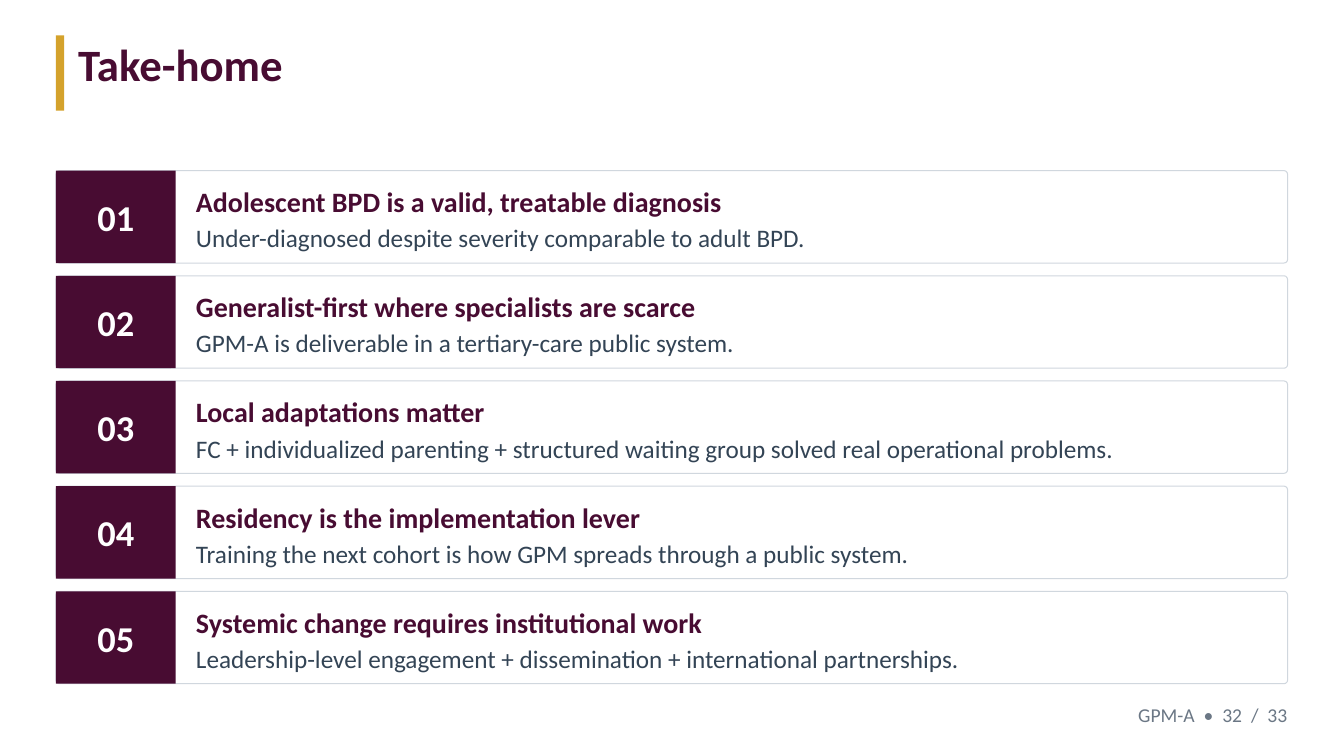
from pptx import Presentation
from pptx.dml.color import RGBColor
from pptx.enum.shapes import MSO_SHAPE
from pptx.enum.text import MSO_ANCHOR, MSO_AUTO_SIZE, PP_ALIGN
from pptx.util import Cm, Pt

PLUM = RGBColor(0x48, 0x0C, 0x32)
GOLD = RGBColor(0xD4, 0xA2, 0x2C)
WHITE = RGBColor(0xFF, 0xFF, 0xFF)
SLATE = RGBColor(0x33, 0x44, 0x55)
GREY = RGBColor(0x6B, 0x77, 0x85)
BORDER = RGBColor(0xD0, 0xD7, 0xDE)

FONT = "Calibri"
MARGIN = Cm(1.41)
CONTENT_W = Cm(31.04)
CARD_TOP, CARD_H, CARD_PITCH = Cm(4.3), Cm(2.33), Cm(2.65)

MESSAGES = [
    ("Adolescent BPD is a valid, treatable diagnosis",
     "Under-diagnosed despite severity comparable to adult BPD."),
    ("Generalist-first where specialists are scarce",
     "GPM-A is deliverable in a tertiary-care public system."),
    ("Local adaptations matter",
     "FC + individualized parenting + structured waiting group solved real operational problems."),
    ("Residency is the implementation lever",
     "Training the next cohort is how GPM spreads through a public system."),
    ("Systemic change requires institutional work",
     "Leadership-level engagement + dissemination + international partnerships."),
]


def add_block(slide, kind, x, y, w, h, fill):
    sp = slide.shapes.add_shape(kind, x, y, w, h)
    sp.shadow.inherit = False
    sp.fill.solid()
    sp.fill.fore_color.rgb = fill
    sp.line.fill.background()
    return sp


def write(sp, text, size, color, bold=False, align=PP_ALIGN.LEFT, anchor=MSO_ANCHOR.TOP):
    tf = sp.text_frame
    tf.word_wrap = True
    tf.margin_left = tf.margin_right = tf.margin_top = tf.margin_bottom = 0
    tf.vertical_anchor = anchor
    tf.text = text
    p = tf.paragraphs[0]
    p.alignment = align
    font = p.runs[0].font
    font.name, font.size, font.bold = FONT, Pt(size), bold
    font.color.rgb = color


def add_label(slide, x, y, w, h, text, size, color, **style):
    sp = slide.shapes.add_textbox(x, y, w, h)
    write(sp, text, size, color, **style)
    sp.text_frame.auto_size = MSO_AUTO_SIZE.SHAPE_TO_FIT_TEXT


def add_header(slide, x, y, title):
    add_block(slide, MSO_SHAPE.RECTANGLE, x, y, Cm(0.21), Cm(1.9), GOLD)
    add_label(slide, x + Cm(0.56), y + Cm(0.03), Cm(30.48), Cm(1.98),
              title, 32, PLUM, bold=True)


def add_card(slide, x, y, w, h, number, heading, detail):
    card = add_block(slide, MSO_SHAPE.ROUNDED_RECTANGLE, x, y, w, h, WHITE)
    card.adjustments[0] = 0.04
    card.line.color.rgb = BORDER
    card.line.width = Pt(0.75)

    badge = add_block(slide, MSO_SHAPE.RECTANGLE, x, y, Cm(3.02), h, PLUM)
    write(badge, f"{number:02d}", 26, WHITE, bold=True,
          align=PP_ALIGN.CENTER, anchor=MSO_ANCHOR.MIDDLE)

    text_x, text_w = x + Cm(3.53), w - Cm(4.22)
    add_label(slide, text_x, y + Cm(0.35), text_w, Cm(0.86), heading, 20, PLUM, bold=True)
    add_label(slide, text_x, y + Cm(1.31), text_w, Cm(0.76), detail, 18, SLATE)


def add_footer(slide, right, y, text):
    w = Cm(5.29)
    add_label(slide, right - w, y, w, Cm(0.61), text, 14, GREY, align=PP_ALIGN.RIGHT)


def main():
    """Build the take-home slide and save it."""
    prs = Presentation()
    prs.slide_width, prs.slide_height = Cm(33.87), Cm(19.05)
    slide = prs.slides.add_slide(prs.slide_layouts[6])
    add_header(slide, MARGIN, Cm(0.89), "Take-home")
    for i, (heading, detail) in enumerate(MESSAGES):
        add_card(slide, MARGIN, CARD_TOP + i * CARD_PITCH, CONTENT_W, CARD_H,
                 i + 1, heading, detail)
    add_footer(slide, MARGIN + CONTENT_W, Cm(17.71), "GPM-A  •  32  /  33")
    prs.save("out.pptx")


if __name__ == "__main__":
    main()
